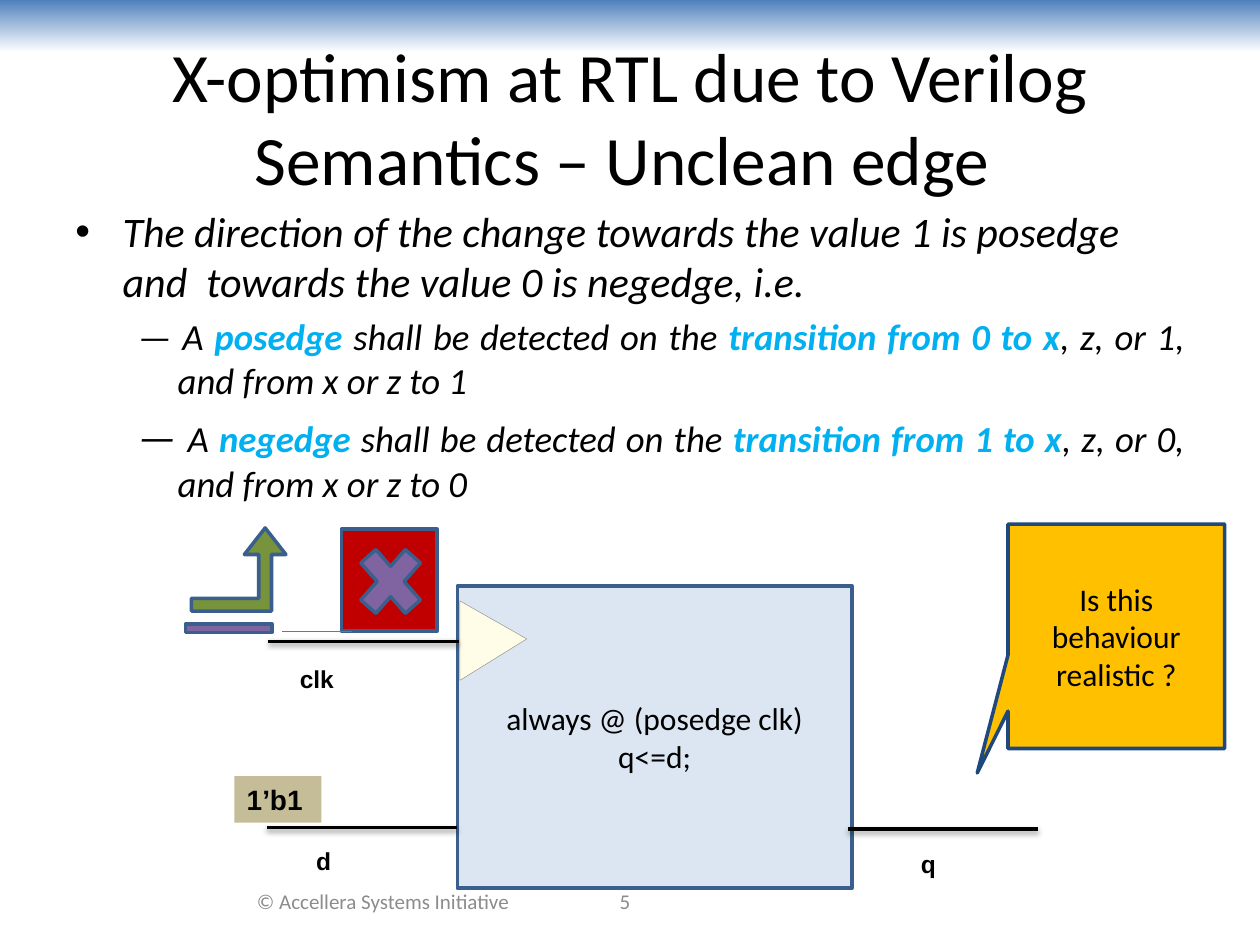
from lxml import etree
from pptx import Presentation
from pptx.dml.color import RGBColor
from pptx.enum.shapes import MSO_CONNECTOR, MSO_SHAPE
from pptx.enum.text import MSO_ANCHOR, PP_ALIGN
from pptx.oxml.ns import qn
from pptx.util import Pt

LEFT, CENTER, JUSTIFY = PP_ALIGN.LEFT, PP_ALIGN.CENTER, PP_ALIGN.JUSTIFY
TOP, MIDDLE = MSO_ANCHOR.TOP, MSO_ANCHOR.MIDDLE
STRAIGHT = MSO_CONNECTOR.STRAIGHT

BLACK = RGBColor(0, 0, 0)
WHITE = RGBColor(0xFF, 0xFF, 0xFF)
GREY = RGBColor(0x8C, 0x8C, 0x8C)
BLUE = RGBColor(0x4F, 0x81, 0xBD)
CYAN = RGBColor(0x00, 0xB0, 0xF0)
OUTLINE = RGBColor(0x3A, 0x5F, 0x8C)
NAVY = RGBColor(0x1F, 0x49, 0x7D)
THIN_BLUE = RGBColor(0x4B, 0x7E, 0xBC)
GREEN = RGBColor(0x77, 0x93, 0x3C)
PURPLE = RGBColor(0x80, 0x64, 0xA2)
PALE_BLUE = RGBColor(0xDC, 0xE6, 0xF2)
CREAM = RGBColor(0xFF, 0xFD, 0xE8)
TAN = RGBColor(0xC4, 0xBD, 0x97)
RED = RGBColor(0xC0, 0x00, 0x00)
AMBER = RGBColor(0xFF, 0xC0, 0x00)


def style_font(font, size, color=BLACK, name="Calibri", bold=False, italic=False):
    font.size, font.name = Pt(size), name
    font.color.rgb = color
    font.bold, font.italic = bold, italic


def write(shape, text, size, color=BLACK, name="Calibri", bold=False,
          align=CENTER, anchor=MIDDLE):
    frame = shape.text_frame
    frame.word_wrap = True
    frame.vertical_anchor = anchor
    frame.text = text
    for paragraph in frame.paragraphs:
        paragraph.alignment = align
        for run in paragraph.runs:
            style_font(run.font, size, color, name, bold)


def add_text(slide, box, text, size, **style):
    textbox = slide.shapes.add_textbox(*map(Pt, box))
    write(textbox, text, size, **style)


def add_block(slide, kind, box, fill, line=OUTLINE, width=2, adjust=()):
    block = slide.shapes.add_shape(kind, *map(Pt, box))
    block.shadow.inherit = False
    block.fill.solid()
    block.fill.fore_color.rgb = fill
    if line is None:
        block.line.fill.background()
    else:
        block.line.color.rgb = line
        block.line.width = Pt(width)
    for index, value in enumerate(adjust):
        block.adjustments[index] = value
    return block


def add_wire(slide, x, y, length, color=BLACK, width=2, shadow=True):
    wire = slide.shapes.add_connector(STRAIGHT, Pt(x), Pt(y), Pt(x + length), Pt(y))
    wire.line.color.rgb = color
    wire.line.width = Pt(width)
    effects = etree.SubElement(wire._element.spPr, qn("a:effectLst"))
    if shadow:
        outer = etree.SubElement(effects, qn("a:outerShdw"), blurRad=str(Pt(3.1)),
                                 dist=str(Pt(1.6)), dir="5400000", rotWithShape="0")
        shade = etree.SubElement(outer, qn("a:srgbClr"), val="000000")
        etree.SubElement(shade, qn("a:alpha"), val="38000")


def add_header_band(slide):
    band = add_block(slide, MSO_SHAPE.RECTANGLE, (0, 0, 720, 30), BLUE, None)
    band.fill.gradient()
    band.fill.gradient_angle = 270
    for stop, color in zip(band.fill.gradient_stops, (BLUE, WHITE)):
        stop.color.rgb = color


def set_indent(paragraph, margin, hanging, bullet=None):
    properties = paragraph._p.get_or_add_pPr()
    properties.set("marL", str(Pt(margin)))
    properties.set("indent", str(Pt(-hanging)))
    if bullet:
        etree.SubElement(properties, qn("a:buFont"), typeface="Arial")
        etree.SubElement(properties, qn("a:buChar"), char=bullet)
    else:
        etree.SubElement(properties, qn("a:buNone"))


def add_rules(slide):
    frame = slide.shapes.add_textbox(Pt(36), Pt(113.8), Pt(648), Pt(354)).text_frame
    frame.word_wrap = True
    intro = frame.paragraphs[0]
    intro.text = ("The direction of the change towards the value 1 is posedge "
                  "and  towards the value 0 is negedge, i.e.")
    set_indent(intro, 27, 27, "•")
    style_font(intro.runs[0].font, 24, italic=True)

    # Each edge: name, starting value, final value, dash size
    for edge, start, end, dash_size in (("posedge", 0, 1, 21), ("negedge", 1, 0, 24)):
        rule = frame.add_paragraph()
        rule.alignment = JUSTIFY
        rule.space_before = Pt(dash_size * 0.2)
        set_indent(rule, 58.5, 22.5)
        parts = (
            ("— ", dash_size, False),
            ("A ", 21, False),
            (edge, 21, True),
            (" shall be detected on the ", 21, False),
            (f"transition from {start} to x", 21, True),
            (f", z, or {end}, and from x or z to {end}", 21, False),
        )
        for text, size, key in parts:
            run = rule.add_run()
            run.text = text
            style_font(run.font, size, CYAN if key else BLACK, bold=key, italic=True)


def add_clock_symbols(slide):
    add_block(slide, MSO_SHAPE.BENT_UP_ARROW, (109.4, 301.7, 54, 47.5), GREEN,
              adjust=(0.153, 0.25, 0.32))
    add_block(slide, MSO_SHAPE.MATH_MINUS, (97.2, 348.5, 67, 20.9), PURPLE)


def add_flip_flop(slide):
    body = add_block(slide, MSO_SHAPE.RECTANGLE, (261.4, 334.8, 225.4, 172.8), PALE_BLUE)
    write(body, "always @ (posedge clk)\nq<=d;", 18)
    clock_input = add_block(slide, MSO_SHAPE.ISOSCELES_TRIANGLE,
                            (259.2, 347, 45.4, 38.2), CREAM, GREY, 0.25, (0.479,))
    clock_input.rotation = 90

    # Ports: wire start, wire height, label place
    ports = (
        ("clk", 153.4, 366.5, 164.2, 375.8),
        ("d", 152.6, 473, 173.5, 480.2),
        ("q", 484.6, 473.8, 519.1, 481.7),
    )
    for name, x, y, label_x, label_y in ports:
        add_wire(slide, x, y, 108.7)
        add_text(slide, (label_x, label_y, 49.7, 21.6), name, 14, name="Arial",
                 bold=True, align=LEFT, anchor=TOP)

    data_value = add_block(slide, MSO_SHAPE.RECTANGLE, (133.9, 443.5, 49.7, 26.6), TAN, None)
    write(data_value, "1’b1", 16, name="Arial", bold=True, align=LEFT, anchor=TOP)


def add_unknown_value(slide):
    add_block(slide, MSO_SHAPE.RECTANGLE, (195.1, 302.4, 54.7, 58.3), RED)
    add_block(slide, MSO_SHAPE.MATH_MULTIPLY, (198.7, 304.6, 49, 55.4), PURPLE)
    add_wire(slide, 161.3, 360.7, 39.6, THIN_BLUE, 0.75, shadow=False)


def main():
    deck = Presentation()
    deck.slide_width, deck.slide_height = Pt(720), Pt(540)
    slide = deck.slides.add_slide(deck.slide_layouts[6])

    # Header, title and rules
    add_header_band(slide)
    add_text(slide, (36, 21.6, 648, 90),
             "X-optimism at RTL due to Verilog Semantics – Unclean edge ", 39.6)
    add_rules(slide)

    # Footer
    add_text(slide, (131.8, 500.4, 174.2, 28.8), "© Accellera Systems Initiative", 12,
             color=GREY)
    add_text(slide, (288, 500.4, 138.2, 28.8), "5", 12, color=GREY)

    # Circuit
    add_clock_symbols(slide)
    add_flip_flop(slide)
    add_unknown_value(slide)

    # Question
    question = add_block(slide, MSO_SHAPE.RECTANGULAR_CALLOUT, (576, 299.5, 123.8, 128.2),
                         AMBER, NAVY, adjust=(-0.642, 0.609))
    write(question, "Is this behaviour realistic ?", 18)

    deck.save("out.pptx")


if __name__ == "__main__":
    main()
